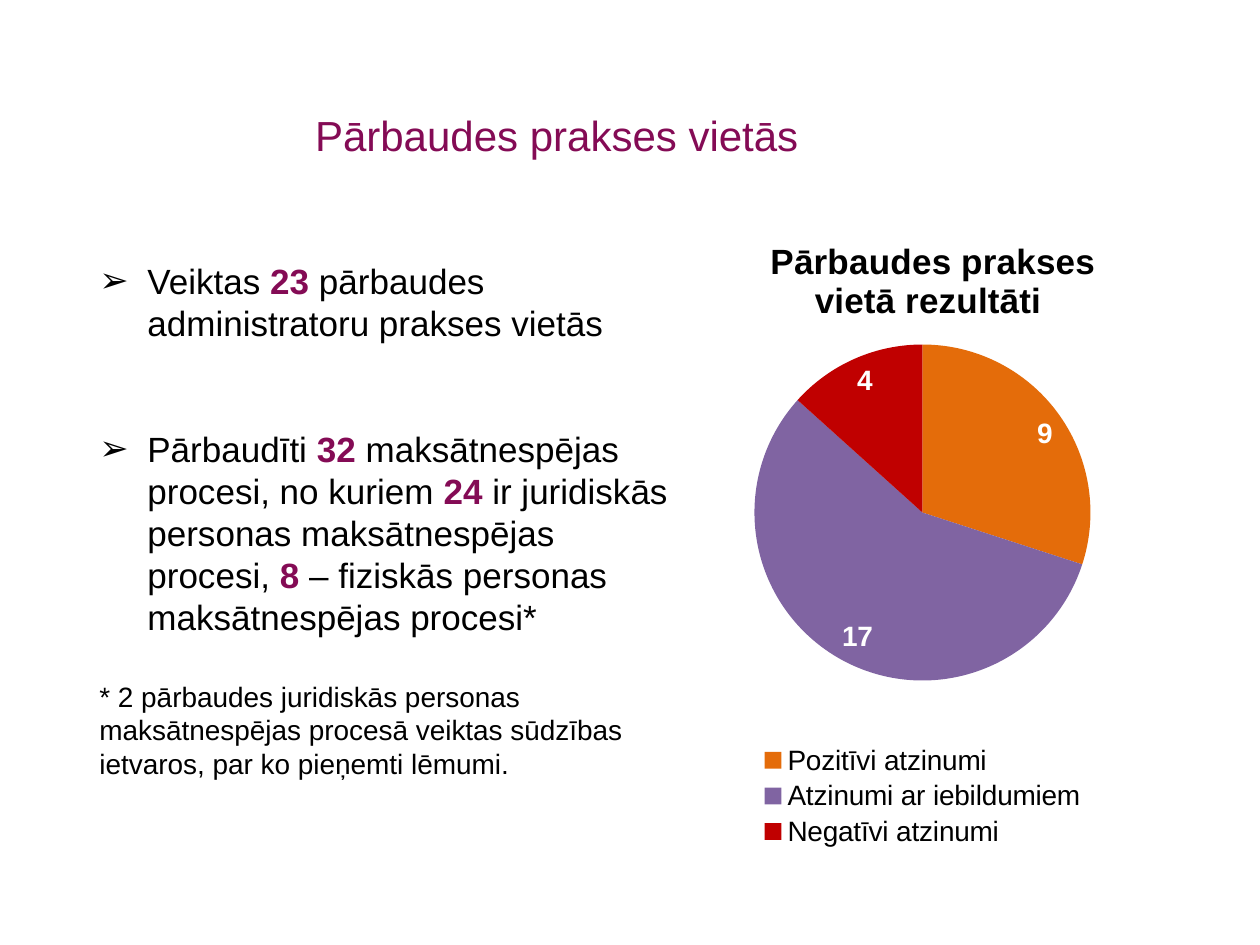
from dataclasses import dataclass

from lxml import etree
from pptx import Presentation
from pptx.chart.data import CategoryChartData
from pptx.dml.color import RGBColor
from pptx.enum.chart import XL_CHART_TYPE, XL_LABEL_POSITION, XL_LEGEND_POSITION
from pptx.enum.text import MSO_ANCHOR, PP_ALIGN
from pptx.oxml.ns import qn
from pptx.util import Pt

PIE = XL_CHART_TYPE.PIE
LABEL_INSIDE_END = XL_LABEL_POSITION.INSIDE_END
LEGEND_BOTTOM = XL_LEGEND_POSITION.BOTTOM
ANCHOR_BOTTOM = MSO_ANCHOR.BOTTOM
ANCHOR_TOP = MSO_ANCHOR.TOP
ALIGN_CENTER = PP_ALIGN.CENTER
ALIGN_LEFT = PP_ALIGN.LEFT
EMU_PER_PX = 914400 // 126


@dataclass(frozen=True)
class Theme:
    font: str = "Arial"
    text: str = "000000"
    accent: str = "840B55"
    label: str = "FFFFFF"
    slices: tuple = ("E46C0A", "8064A2", "C00000")
    title_size: int = 24
    body_size: int = 20
    small_size: int = 16


THEME = Theme()


def px(length):
    return length * EMU_PER_PX


def style_font(font, size, color, bold=False):
    font.name = THEME.font
    font.size = Pt(size)
    font.bold = bold
    font.color.rgb = RGBColor.from_string(color)


def add_text_box(slide, left, top, width, height, anchor, right_inset, bottom_inset):
    shape = slide.shapes.add_textbox(px(left), px(top), px(width), px(height))
    frame = shape.text_frame
    frame.word_wrap = True
    frame.vertical_anchor = anchor
    frame.margin_right = px(right_inset)
    frame.margin_bottom = px(bottom_inset)
    return frame


def add_bullet(paragraph, indent):
    properties = paragraph._p.get_or_add_pPr()
    properties.set("marL", str(px(indent)))
    properties.set("indent", str(-px(indent)))
    etree.SubElement(properties, qn("a:buFont"), typeface=THEME.font)
    etree.SubElement(properties, qn("a:buChar"), char="➢")


def fill_paragraph(paragraph, parts, size, space_before=0, bulleted=False):
    if bulleted:
        add_bullet(paragraph, 48)
    paragraph.alignment = ALIGN_LEFT
    paragraph.space_before = Pt(space_before)
    for text, highlighted in parts:
        run = paragraph.add_run()
        run.text = text
        style_font(run.font, size, THEME.accent if highlighted else THEME.text, highlighted)


def set_layout(parent, index, **settings):
    for old_layout in parent.findall(qn("c:layout")):
        parent.remove(old_layout)
    layout = etree.Element(qn("c:layout"))
    manual = etree.SubElement(layout, qn("c:manualLayout"))
    for name, value in settings.items():
        etree.SubElement(manual, qn(f"c:{name}"), val=str(value))
    parent.insert(index, layout)


def add_pie(slide, left, top, width, height, title, categories, values):
    data = CategoryChartData()
    data.categories = categories
    data.add_series("Series 1", values)
    frame = slide.shapes.add_chart(PIE, px(left), px(top), px(width), px(height), data)
    chart = frame.chart
    style_font(chart.font, THEME.small_size, THEME.text)

    chart.has_title = True
    heading = chart.chart_title.text_frame.paragraphs[0]
    heading.text = title
    style_font(heading.font, THEME.body_size, THEME.text, True)

    chart.has_legend = True
    legend = chart.legend
    legend.position = LEGEND_BOTTOM
    legend.include_in_layout = False
    style_font(legend.font, THEME.small_size, THEME.text)

    plot = chart.plots[0]
    plot.vary_by_categories = True
    plot.has_data_labels = True
    labels = plot.data_labels
    labels.show_value = True
    labels.show_percentage = False
    labels.position = LABEL_INSIDE_END
    style_font(labels.font, THEME.small_size, THEME.label, True)
    for index, color in enumerate(THEME.slices):
        fill = plot.series[0].points[index].format.fill
        fill.solid()
        fill.fore_color.rgb = RGBColor.from_string(color)

    root = chart._chartSpace.find(qn("c:chart"))
    set_layout(root.find(qn("c:title")), 1, xMode="edge", yMode="edge", x=0.18, y=0.06)
    set_layout(root.find(qn("c:plotArea")), 0, layoutTarget="inner",
               xMode="edge", yMode="edge", x=0.1, y=0.23, w=0.8, h=0.51)
    set_layout(root.find(qn("c:legend")), 1,
               xMode="edge", yMode="edge", x=0.16, y=0.83, w=0.68, h=0.17)


def main():
    presentation = Presentation()
    presentation.slide_width = px(1260)
    presentation.slide_height = px(945)
    slide = presentation.slides.add_slide(presentation.slide_layouts[6])

    title = add_text_box(slide, 243, 53, 954, 110, ANCHOR_BOTTOM, 339, 3).paragraphs[0]
    title.text = "Pārbaudes prakses vietās"
    title.alignment = ALIGN_CENTER
    style_font(title.font, THEME.title_size, THEME.accent)

    body = add_text_box(slide, 87, 253, 592, 598, ANCHOR_TOP, 8, 6)
    fill_paragraph(body.paragraphs[0], [
        ("Veiktas ", False),
        ("23 ", True),
        ("pārbaudes administratoru prakses vietās", False),
    ], THEME.body_size, bulleted=True)
    fill_paragraph(body.add_paragraph(), [
        ("Pārbaudīti ", False),
        ("32 ", True),
        ("maksātnespējas procesi, no kuriem ", False),
        ("24", True),
        (" ir juridiskās personas maksātnespējas procesi, ", False),
        ("8", True),
        (" – fiziskās personas maksātnespējas procesi*", False),
    ], THEME.body_size, space_before=48, bulleted=True)
    fill_paragraph(body.add_paragraph(), [
        ("* 2 pārbaudes juridiskās personas maksātnespējas procesā veiktas "
         "sūdzības ietvaros, par ko pieņemti lēmumi.", False),
    ], THEME.small_size, space_before=24)

    add_pie(slide, 675, 193, 495, 659, "Pārbaudes prakses vietā rezultāti ",
            ("Pozitīvi atzinumi", "Atzinumi ar iebildumiem", "Negatīvi atzinumi"),
            (9, 17, 4))
    presentation.save("out.pptx")


if __name__ == "__main__":
    main()
